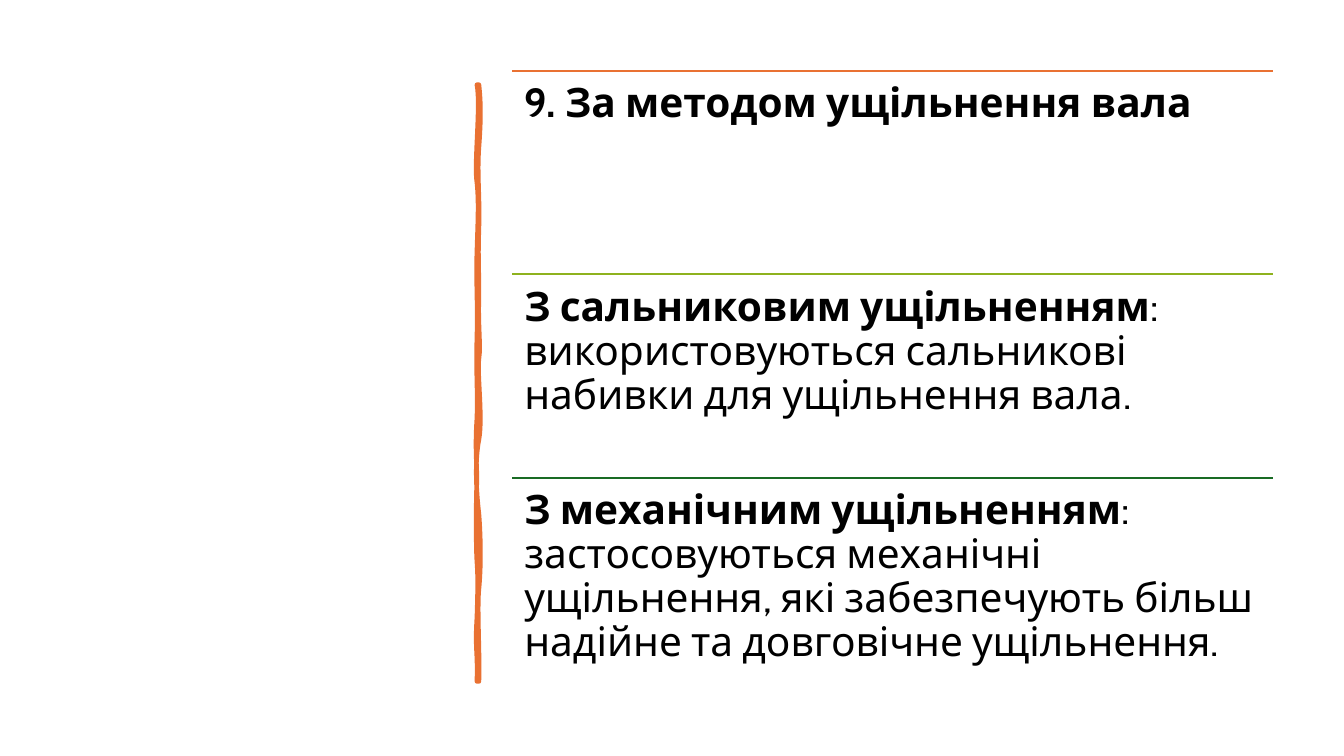
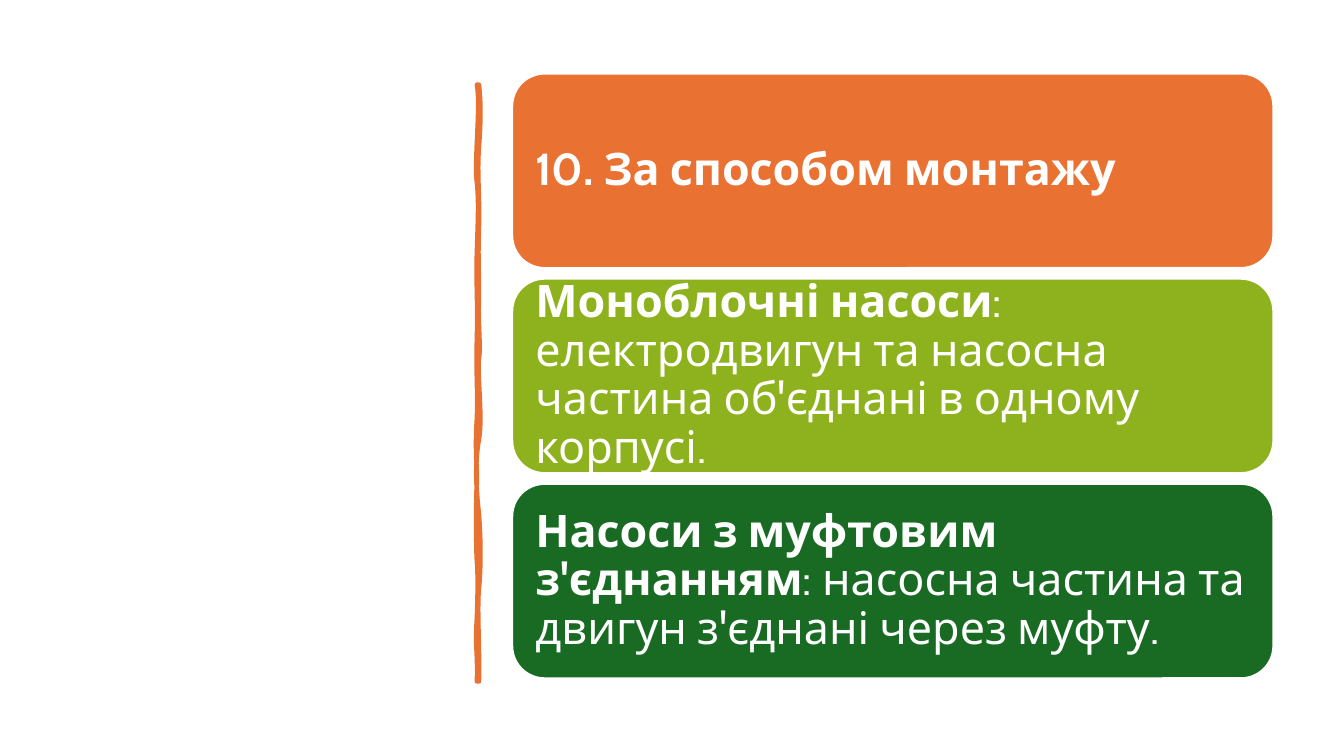
"""Two slides on pump types: by shaft seal and by mounting."""
from lxml import etree
from pptx import Presentation
from pptx import util as u
from pptx.dml.color import RGBColor
from pptx.enum import shapes, text
from pptx.oxml import ns

ORANGE = RGBColor(0xE9, 0x71, 0x32)
LIME = RGBColor(0x8E, 0xB2, 0x1E)
GREEN = RGBColor(0x19, 0x6B, 0x24)
BLACK = RGBColor(0, 0, 0)
WHITE = RGBColor(0xFF, 0xFF, 0xFF)
HUES = (ORANGE, LIME, GREEN)

FONT = "Cabin"
LEFT, WIDE = 5.08, 7.55

START = (4.75, 0.84)
CURVES = [
    ((4.77, 1.02), (4.77, 1.19), (4.75, 1.46)),
    ((4.73, 1.73), (4.76, 1.95), (4.75, 2.26)),
    ((4.74, 2.57), (4.75, 2.62), (4.75, 2.94)),
    ((4.74, 3.25), (4.77, 3.42), (4.75, 3.56)),
    ((4.73, 3.7), (4.79, 4.14), (4.75, 4.36)),
    ((4.71, 4.57), (4.72, 4.84), (4.75, 5.1)),
    ((4.77, 5.36), (4.77, 5.64), (4.75, 5.84)),
    ((4.73, 6.03), (4.76, 6.5), (4.75, 6.76)),
    ((4.74, 6.76), (4.73, 6.76), (4.73, 6.76)),
    ((4.74, 6.46), (4.71, 6.44), (4.73, 6.13)),
    ((4.74, 5.83), (4.74, 5.7), (4.73, 5.57)),
    ((4.72, 5.44), (4.72, 4.95), (4.73, 4.77)),
    ((4.73, 4.59), (4.71, 4.45), (4.73, 4.15)),
    ((4.74, 3.86), (4.72, 3.73), (4.73, 3.35)),
    ((4.74, 2.98), (4.72, 2.81), (4.73, 2.5)),
    ((4.74, 2.18), (4.75, 2), (4.73, 1.81)),
    ((4.7, 1.63), (4.77, 1.04), (4.73, 0.84)),
]

SEALS = [
    ("9. За методом ущільнення вала", ""),
    ("З сальниковим ущільненням",
     ": використовуються сальникові набивки для ущільнення вала."),
    ("З механічним ущільненням",
     ": застосовуються механічні ущільнення, які забезпечують більш "
     "надійне та довговічне ущільнення."),
]
MOUNTS = [
    ("10. За способом монтажу", ""),
    ("Моноблочні насоси",
     ": електродвигун та насосна частина об'єднані в одному корпусі."),
    ("Насоси з муфтовим з'єднанням",
     ": насосна частина та двигун з'єднані через муфту."),
]


class Deck:
    """Holds the style and the current slide."""

    def __init__(self):
        self.prs = Presentation()
        self.prs.slide_width = u.Inches(13.33)
        self.prs.slide_height = u.Inches(7.5)

    def page(self):
        """Start a slide with its hand-drawn bar."""
        self.slide = self.prs.slides.add_slide(self.prs.slide_layouts[6])
        pen = self.slide.shapes.build_freeform(*map(u.Inches, START))
        pen.add_line_segments(
            [tuple(map(u.Inches, curve[-1])) for curve in CURVES], close=True)
        bar = pen.convert_to_shape()
        self.bend(bar, CURVES)
        self.paint(bar, ORANGE, ORANGE, 3.25)

    def bend(self, shape, curves):
        """Turn the straight sides of an outline into cubic curves."""
        sides = list(shape._element.iter(ns.qn("a:lnTo")))
        for side, curve in zip(sides, curves):
            arc = etree.Element(ns.qn("a:cubicBezTo"))
            for x, y in curve:
                dot = etree.SubElement(arc, ns.qn("a:pt"))
                dot.set("x", str(u.Inches(x) - shape.left))
                dot.set("y", str(u.Inches(y) - shape.top))
            side.getparent().replace(side, arc)

    def paint(self, shape, fill, edge, width):
        """Set fill and outline, without shadow."""
        shape.shadow.inherit = False
        shape.fill.solid()
        shape.fill.fore_color.rgb = fill
        shape.line.color.rgb = edge
        shape.line.width = u.Pt(width)

    def rule(self, top, hue):
        """Draw a level line."""
        y = u.Inches(top)
        line = self.slide.shapes.add_connector(
            shapes.MSO_CONNECTOR.STRAIGHT, u.Inches(LEFT), y, u.Inches(LEFT + WIDE), y)
        line.line.color.rgb = hue
        line.line.width = u.Pt(1.5)
        etree.SubElement(line._element.spPr, ns.qn("a:effectLst"))

    def card(self, top, high, hue):
        """Draw a rounded panel."""
        box = self.slide.shapes.add_shape(
            shapes.MSO_SHAPE.ROUNDED_RECTANGLE,
            *map(u.Inches, (LEFT, top, WIDE, high)))
        self.paint(box, hue, WHITE, 1.5)

    def text(self, area, parts, size, hue, inset, anchor):
        """Write a bold lead and its plain tail."""
        frame = self.slide.shapes.add_textbox(*map(u.Inches, area)).text_frame
        frame.word_wrap = True
        frame.vertical_anchor = anchor
        frame.margin_left = frame.margin_right = u.Inches(inset)
        frame.margin_top = frame.margin_bottom = u.Inches(inset)
        para = frame.paragraphs[0]
        para.line_spacing = 0.9
        for words, bold in zip(parts, (True, False)):
            if words:
                run = para.add_run()
                run.text = words
                run.font.name = FONT
                run.font.size = u.Pt(size)
                run.font.bold = bold
                run.font.color.rgb = hue


def main():
    """Build and save both slides."""
    deck = Deck()

    deck.page()
    step = 2.02
    for i, (parts, hue) in enumerate(zip(SEALS, HUES)):
        top = 0.7 + i * step
        deck.rule(top, hue)
        deck.text((LEFT, top, WIDE, step), parts, 29, BLACK, 0.12,
                  text.MSO_ANCHOR.TOP)

    deck.page()
    first, last, high = 0.73, 4.8, 1.93
    step = (last - first) / (len(MOUNTS) - 1)
    side, pad = 0.1, 0.09
    for i, (parts, hue) in enumerate(zip(MOUNTS, HUES)):
        top = first + i * step
        deck.card(top, high, hue)
        deck.text((LEFT + side, top + pad, WIDE - 2 * side, high - 2 * pad),
                  parts, 32, WHITE, 0.13, text.MSO_ANCHOR.MIDDLE)

    deck.prs.save("out.pptx")


if __name__ == "__main__":
    main()
